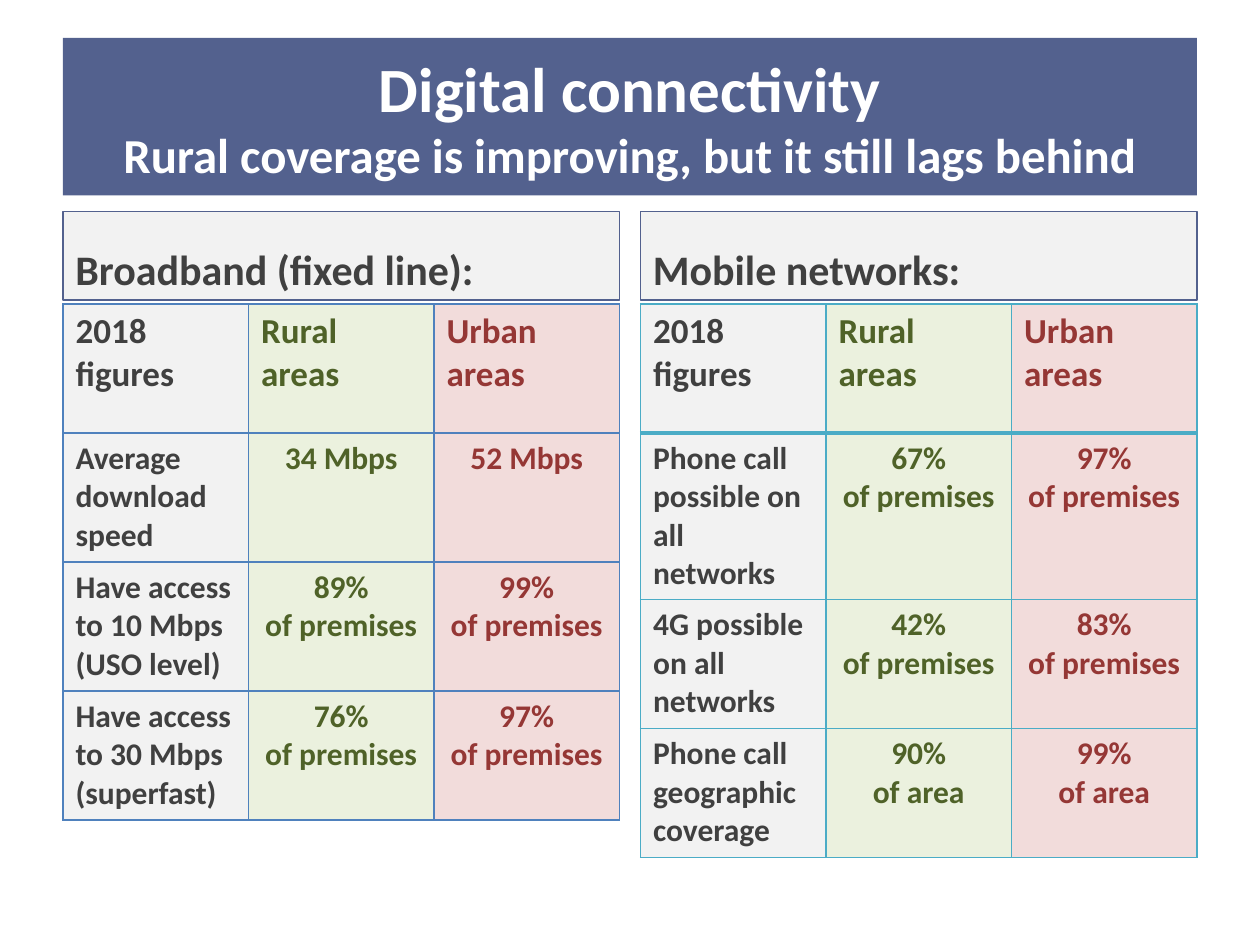
from lxml import etree
from pptx import Presentation
from pptx import util as u
from pptx.dml.color import RGBColor
from pptx.enum import shapes, text
from pptx.oxml.ns import qn

COLORS = {
    "banner": "53618E", "white": "FFFFFF", "blue": "4F81BD", "aqua": "4BACC6",
    "label": "404040", "label_bg": "F2F2F2",
    "rural": "4F6228", "rural_bg": "EBF1DE",
    "urban": "953735", "urban_bg": "F2DCDB",
}
COLUMNS = ("label", "rural", "urban")
HEADER = ("2018 figures", "Rural areas", "Urban areas")
LEFT, RIGHT, PANEL_W = 36, 366, 318
HEADING_TOP, HEADING_H = 121, 50.5
TABLE_TOP, ROW_H = 173.75, 73.7

PANELS = [
    (LEFT, "Broadband (fixed line):", "blue", 1, [
        HEADER,
        ("Average download speed", "34 Mbps", "52 Mbps"),
        ("Have access to 10 Mbps (USO level)", "89%\nof premises", "99%\nof premises"),
        ("Have access to 30 Mbps (superfast)", "76%\nof premises", "97%\nof premises"),
    ]),
    (RIGHT, "Mobile networks:", "aqua", 2, [
        HEADER,
        ("Phone call possible on all networks", "67%\nof premises", "97%\nof premises"),
        ("4G possible on all networks", "42%\nof premises", "83%\nof premises"),
        ("Phone call geographic coverage", "90%\nof area", "99%\nof area"),
    ]),
]


def rgb(name):
    return RGBColor.from_string(COLORS[name])


class Deck:
    font = "Calibri"

    def __init__(self, prs):
        self.s = prs.slides.add_slide(prs.slide_layouts[6])

    def style(self, tf, sizes, color, align=text.PP_ALIGN.LEFT):
        """Format every paragraph; sizes go to its runs in order."""
        for p in tf.paragraphs:
            p.alignment = align
            for r, size in zip(p.runs, sizes):
                r.font.name = self.font
                r.font.size = u.Pt(size)
                r.font.bold = True
                r.font.color.rgb = rgb(color)

    def box(self, x, y, w, h, fill, line=None):
        sp = self.s.shapes.add_shape(
            shapes.MSO_SHAPE.RECTANGLE, u.Pt(x), u.Pt(y), u.Pt(w), u.Pt(h))
        sp.shadow.inherit = False
        sp.fill.solid()
        sp.fill.fore_color.rgb = rgb(fill)
        if line:
            sp.line.color.rgb = rgb(line)
            sp.line.width = u.Pt(0.75)
        else:
            sp.line.fill.background()
        sp.text_frame.word_wrap = True
        return sp.text_frame

    def title(self, words):
        tf = self.box(LEFT, 21.6, RIGHT + PANEL_W - LEFT, 90, "banner")
        tf.vertical_anchor = text.MSO_ANCHOR.MIDDLE
        tf.paragraphs[0].text = words
        self.style(tf, (36, 27.9), "white", text.PP_ALIGN.CENTER)

    def heading(self, x, words):
        tf = self.box(x, HEADING_TOP, PANEL_W, HEADING_H, "label_bg", "banner")
        tf.vertical_anchor = text.MSO_ANCHOR.BOTTOM
        tf.text = words
        self.style(tf, (24,), "label")

    def borders(self, cell, color, bottom):
        tc_pr = cell._tc.get_or_add_tcPr()
        widths = {"a:lnL": 1, "a:lnR": 1, "a:lnT": 1, "a:lnB": bottom}
        for i, (tag, width) in enumerate(widths.items()):
            ln = etree.Element(qn(tag), w=str(u.Pt(width)))
            fill = etree.SubElement(ln, qn("a:solidFill"))
            etree.SubElement(fill, qn("a:srgbClr"), val=COLORS[color])
            tc_pr.insert(i, ln)

    def table(self, x, rows, color, header_rule):
        table = self.s.shapes.add_table(
            len(rows), len(COLUMNS), u.Pt(x), u.Pt(TABLE_TOP),
            u.Pt(PANEL_W), u.Pt(ROW_H * len(rows))).table
        for i, row in enumerate(rows):
            for j, (words, column) in enumerate(zip(row, COLUMNS)):
                cell = table.cell(i, j)
                cell.fill.solid()
                cell.fill.fore_color.rgb = rgb(column + "_bg")
                cell.text_frame.text = words
                centred = i > 0 and j > 0
                self.style(cell.text_frame, (18 if i else 20,), column,
                           text.PP_ALIGN.CENTER if centred else text.PP_ALIGN.LEFT)
                self.borders(cell, color, 1 if i else header_rule)


def main():
    prs = Presentation()
    prs.slide_width, prs.slide_height = u.Pt(720), u.Pt(540)
    deck = Deck(prs)
    for x, words, color, header_rule, rows in PANELS:
        deck.heading(x, words)
        deck.table(x, rows, color, header_rule)
    deck.title("Digital connectivity\v"
               "Rural coverage is improving, but it still lags behind")
    prs.save("out.pptx")


if __name__ == "__main__":
    main()
